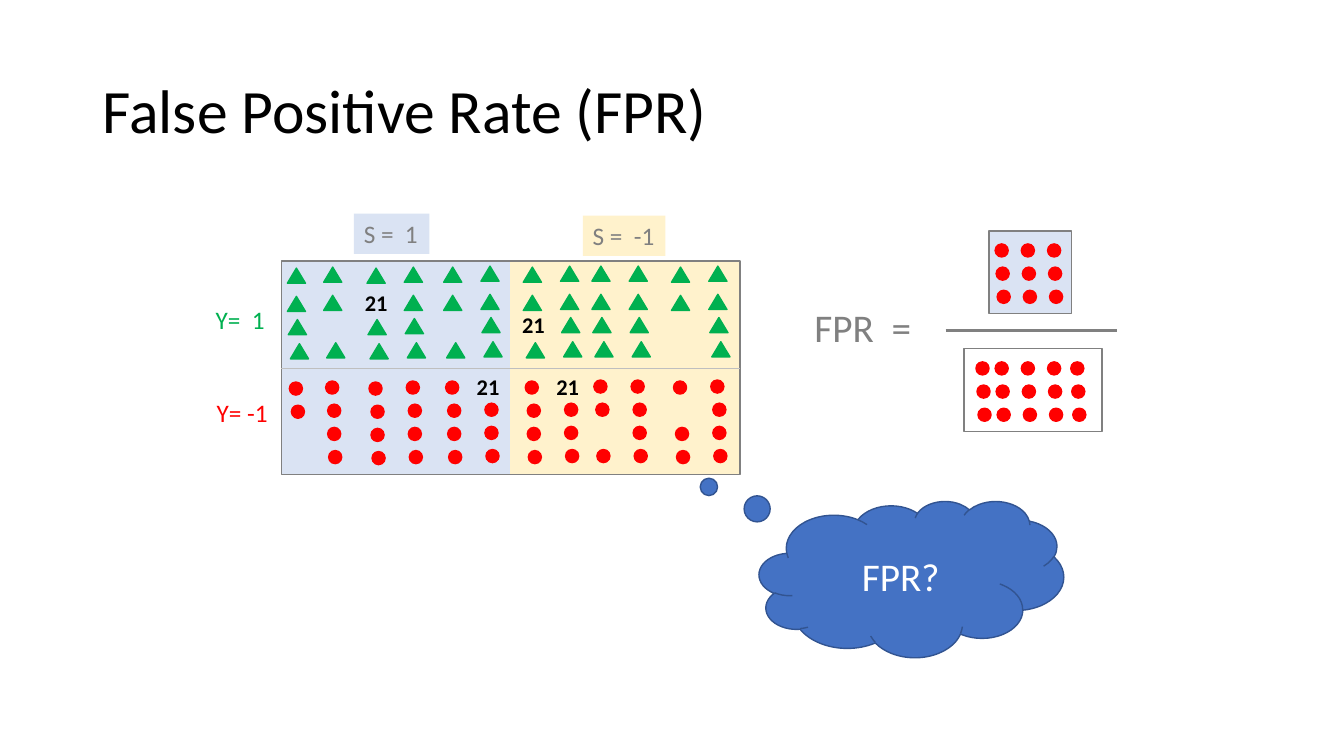
import pptx
import pptx.dml.color
import pptx.enum.shapes
import pptx.enum.text
import pptx.oxml.ns
import pptx.util
from lxml import etree

Inches = pptx.util.Inches
Color = pptx.dml.color.RGBColor
Shape = pptx.enum.shapes.MSO_SHAPE
Align = pptx.enum.text.PP_ALIGN
Anchor = pptx.enum.text.MSO_ANCHOR
Fit = pptx.enum.text.MSO_AUTO_SIZE

BLACK = Color(0, 0, 0)
WHITE = Color(255, 255, 255)
GRAY = Color(0x80, 0x80, 0x80)
SILVER = Color(0xBF, 0xBF, 0xBF)
RED = Color(0xFF, 0, 0)
GREEN = Color(0, 0xB0, 0x50)
BLUE = Color(0x44, 0x72, 0xC4)
NAVY = Color(0x32, 0x54, 0x91)
PALE = Color(0xDA, 0xE3, 0xF3)
CREAM = Color(0xFF, 0xF2, 0xCC)

COLS = [0.06, 0.42, 0.85, 1.22, 1.61, 1.98, 2.4, 2.77, 3.08, 3.45, 3.87, 4.24]
LIFTS = [0.01, 0, 0.01, 0, 0, -0.01, 0, -0.01, -0.01, -0.01, 0, -0.01]
TREES = ["111111111111", "112111111111", "1.11.12111.1", "1111111111.1"]
DOTS = ["111112121111", "1111111111.1", ".1111111.111", ".11111111111"]


def write(item, text, size=18, color=GRAY, bold=False, align=Align.LEFT,
          anchor=Anchor.TOP, wrap=False, space=1.0):
    frame = item.text_frame
    frame.word_wrap = wrap
    frame.auto_size = Fit.NONE if wrap else Fit.SHAPE_TO_FIT_TEXT
    frame.vertical_anchor = anchor
    para = frame.paragraphs[0]
    para.alignment = align
    para.line_spacing = space
    run = para.add_run()
    run.text = text
    run.font.name = "Calibri"
    run.font.size = pptx.util.Pt(size)
    run.font.bold = bold
    run.font.color.rgb = color


def label(pad, box, text, **style):
    write(pad.add_textbox(*map(Inches, box)), text, **style)


def draw(pad, kind, box, fill=None, line=None):
    item = pad.add_shape(kind, *map(Inches, box))
    item.shadow.inherit = False
    if fill is None:
        item.fill.background()
    else:
        item.fill.solid()
        item.fill.fore_color.rgb = fill
    if line is None:
        item.line.fill.background()
    else:
        item.line.color.rgb = line
        item.line.width = pptx.util.Pt(1)
    return item


def rule(pad, left, top, width, color, weight):
    line = pad.add_connector(
        pptx.enum.shapes.MSO_CONNECTOR.STRAIGHT,
        Inches(left), Inches(top), Inches(left + width), Inches(top))
    line.line.color.rgb = color
    line.line.width = pptx.util.Pt(weight)
    etree.SubElement(line._element.spPr, pptx.oxml.ns.qn("a:effectLst"))


def dot(pad, x, y):
    draw(pad, Shape.OVAL, (x, y, 0.13, 0.13), RED, RED)


def tree(pad, x, y):
    draw(pad, Shape.ISOSCELES_TRIANGLE, (x, y, 0.18, 0.15), GREEN, GREEN)


def field(pad, left, masks, tops, drifts, mark, shift):
    for mask, top, drift in zip(masks, tops, drifts):
        for sign, col, lift in zip(mask, COLS, LIFTS):
            x, y = left + col + drift, top + lift
            if sign == "1":
                mark(pad, x, y)
            elif sign == "2":
                label(pad, (x - shift, y - 0.12, 0.43, 0.37), "21",
                      size=16, color=BLACK, bold=True)


def matrix(slide, left, top, width, height):
    pad = slide.shapes.add_group_shape().shapes
    half = width / 2
    draw(pad, Shape.RECTANGLE, (left + 0.01, top, half - 0.01, height), PALE, PALE)
    draw(pad, Shape.RECTANGLE, (left + half, top, half - 0.01, height), CREAM, CREAM)
    draw(pad, Shape.RECTANGLE, (left, top, width, height), line=GRAY)
    rule(pad, left, top + height / 2, width, SILVER, 0.5)
    field(pad, left, TREES, [top + y for y in (0.06, 0.34, 0.57, 0.81)],
          (0, 0, 0.01, 0.03), tree, 0.12)
    field(pad, left + 0.02, DOTS, [top + 1.19 + 0.23 * row for row in range(4)],
          (0, 0.02, 0.02, 0.03), dot, 0.16)
    label(pad, (left - 0.75, top + 0.38, 0.69, 0.4), "Y=  1", color=GREEN)
    label(pad, (left - 0.74, top + 1.3, 0.71, 0.4), "Y= -1", color=RED)
    for x, y, wide, fill, text in ((0.72, 0.47, 0.75, PALE, "S =  1"),
                                   (2.99, 0.45, 0.82, CREAM, "S =  -1")):
        tag = draw(pad, Shape.RECTANGLE, (left + x, top - y, wide, 0.4), fill)
        write(tag, text)


def panel(slide, left, top, width, height, cols, fill=None):
    pad = slide.shapes.add_group_shape().shapes
    draw(pad, Shape.RECTANGLE, (left, top, width, height), fill, GRAY)
    for col in cols:
        for row in range(3):
            dot(pad, left + col + 0.01 * row, top + 0.13 + 0.23 * row)


def ratio(slide, left, top, width, height):
    label(slide.shapes, (left, top + 0.67, 1.17, 0.57), "FPR  =", size=28)
    rule(slide.shapes, left + 1.4, top + height / 2, width - 1.4, GRAY, 2.25)
    panel(slide, left + 1.83, top, 0.82, 0.82, (0.06, 0.32, 0.58), PALE)
    panel(slide, left + 1.58, top + 1.17, 1.37, 0.82,
          (0.12, 0.31, 0.57, 0.83, 1.06))


def title(slide, *box):
    label(slide.shapes, box, "False Positive Rate (FPR)", size=44, color=BLACK,
          anchor=Anchor.MIDDLE, wrap=True, space=0.9)


def cloud(slide, *box):
    item = draw(slide.shapes, Shape.CLOUD_CALLOUT, box, BLUE, NAVY)
    item.adjustments[0] = -0.798
    item.adjustments[1] = -0.708
    write(item, "FPR?", size=28, color=WHITE, align=Align.CENTER,
          anchor=Anchor.MIDDLE, wrap=True)


def main():
    deck = pptx.Presentation()
    deck.slide_width = Inches(13.33)
    deck.slide_height = Inches(7.5)
    slide = deck.slides.add_slide(deck.slide_layouts[6])
    ratio(slide, 7.98, 2.29, 3.1, 1.98)
    title(slide, 0.92, 0.4, 11.5, 1.45)
    cloud(slide, 7.53, 4.97, 3.02, 1.55)
    matrix(slide, 2.79, 2.59, 4.55, 2.12)
    deck.save("out.pptx")


if __name__ == "__main__":
    main()
